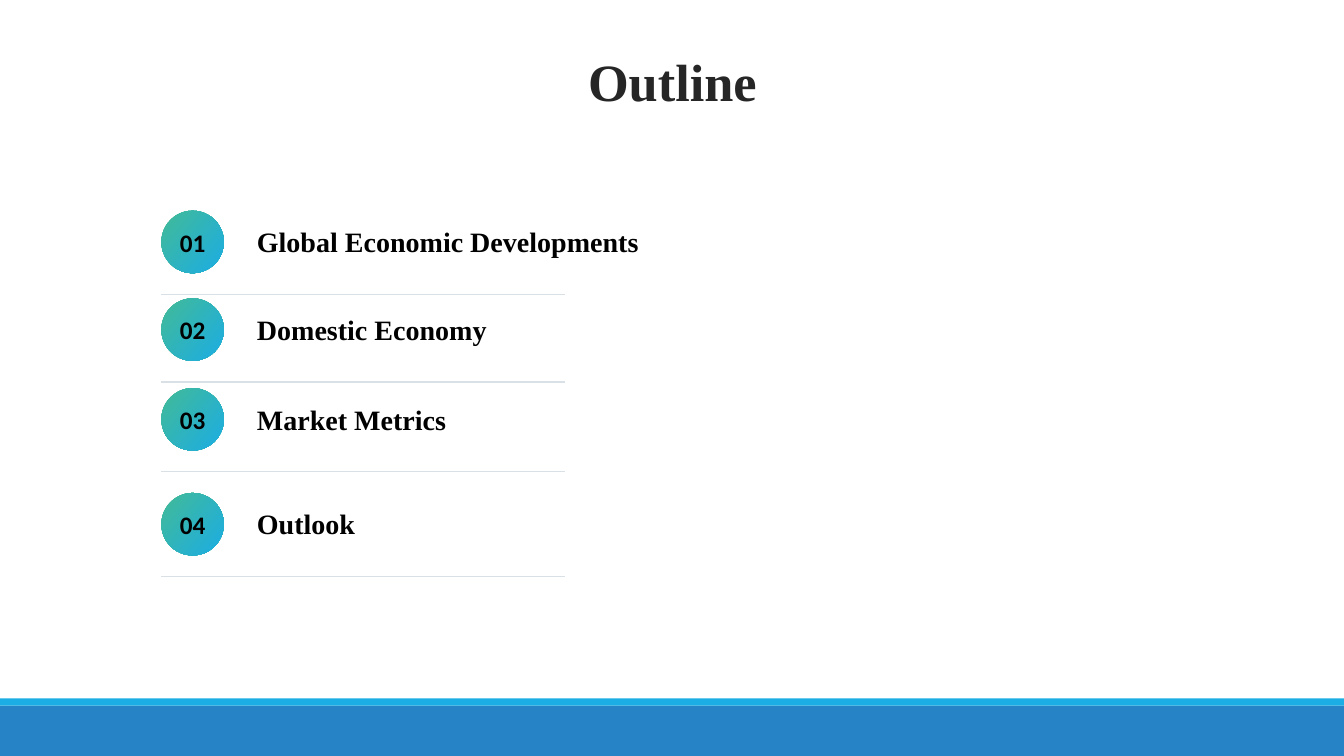
from lxml.etree import SubElement
from pptx import Presentation
from pptx.dml.color import RGBColor
from pptx.enum.shapes import MSO_CONNECTOR as Connector, MSO_SHAPE as Shape
from pptx.enum.text import MSO_ANCHOR as Anchor, MSO_AUTO_SIZE as AutoSize, PP_ALIGN as Align
from pptx.oxml.ns import qn
from pptx.util import Inches, Pt

COLORS = {
    "band": "2683C6",
    "accent": "1CADE4",
    "green": "42BA97",
    "title": "262626",
    "text": "000000",
    "rule": "D9E0E6",
}
SERIF, SANS = "Times New Roman", "Calibri"
SLIDE_W, SLIDE_H = 13.33, 7.5

# Section name and the top of its row
SECTIONS = [
    ("Global Economic Developments", 2.09),
    ("Domestic Economy", 2.96),
    ("Market Metrics", 3.85),
    ("Outlook", 4.89),
]
LEFT = 1.6
BADGE = 0.62
RULE_LENGTH = 4
RULE_DROP = 0.83


def color(name):
    return RGBColor.from_string(COLORS[name])


class OutlineSlide:
    def __init__(self, deck):
        self.slide = deck.slides.add_slide(deck.slide_layouts[5])
        self.shapes = self.slide.shapes

    def set_text(self, frame, text, font, size, ink="text", align=Align.LEFT):
        frame.text = text
        paragraph = frame.paragraphs[0]
        paragraph.alignment = align
        style = paragraph.runs[0].font
        style.name, style.size, style.bold = font, Pt(size), True
        style.color.rgb = color(ink)
        return paragraph

    def shape(self, kind, left, top, width, height):
        shape = self.shapes.add_shape(
            kind, Inches(left), Inches(top), Inches(width), Inches(height))
        shape.shadow.inherit = False
        shape.line.fill.background()
        return shape

    def band(self, top, height, fill):
        band = self.shape(Shape.RECTANGLE, 0, top, SLIDE_W, height)
        band.fill.solid()
        band.fill.fore_color.rgb = color(fill)

    def title(self, text):
        title = self.shapes.title
        title.left, title.top = Inches(0.37), Inches(0.56)
        title.width, title.height = Inches(12.6), Inches(0.6)
        frame = title.text_frame
        frame.vertical_anchor = Anchor.MIDDLE
        frame.auto_size = AutoSize.NONE
        self.set_text(frame, text, SERIF, 37.4, "title", Align.CENTER).line_spacing = 0.8

    def badge(self, number, top):
        badge = self.shape(Shape.OVAL, LEFT, top, BADGE, BADGE)
        badge.fill.gradient()
        badge.fill.gradient_angle = 320
        for stop, name, position in zip(badge.fill.gradient_stops, ("green", "accent"), (0, 1)):
            stop.color.rgb = color(name)
            stop.position = position
        frame = badge.text_frame
        frame.margin_left = frame.margin_right = frame.margin_top = frame.margin_bottom = 0
        frame.vertical_anchor = Anchor.MIDDLE
        self.set_text(frame, f"{number:02}", SANS, 18, align=Align.CENTER)

    def heading(self, text, top):
        heading = self.shapes.add_textbox(
            Inches(2.45), Inches(top), Inches(5), Inches(0.44))
        frame = heading.text_frame
        frame.word_wrap = True
        frame.auto_size = AutoSize.SHAPE_TO_FIT_TEXT
        self.set_text(frame, text, SERIF, 20)

    def rule(self, top):
        rule = self.shapes.add_connector(
            Connector.STRAIGHT, Inches(LEFT), Inches(top),
            Inches(LEFT + RULE_LENGTH), Inches(top))
        rule.line.color.rgb = color("rule")
        rule.line.width = Pt(1)
        SubElement(rule._element.spPr, qn("a:effectLst"))


def main():
    deck = Presentation()
    deck.slide_width, deck.slide_height = Inches(SLIDE_W), Inches(SLIDE_H)
    outline = OutlineSlide(deck)

    # Footer bands
    outline.band(7, 0.5, "band")
    outline.band(6.93, 0.07, "accent")

    # Title
    outline.title("Outline")

    # Numbered sections, each closed by a rule
    for number, (section, top) in enumerate(SECTIONS, start=1):
        outline.badge(number, top)
        outline.heading(section, top + 0.09)
        outline.rule(top + RULE_DROP)

    deck.save("out.pptx")


if __name__ == "__main__":
    main()
